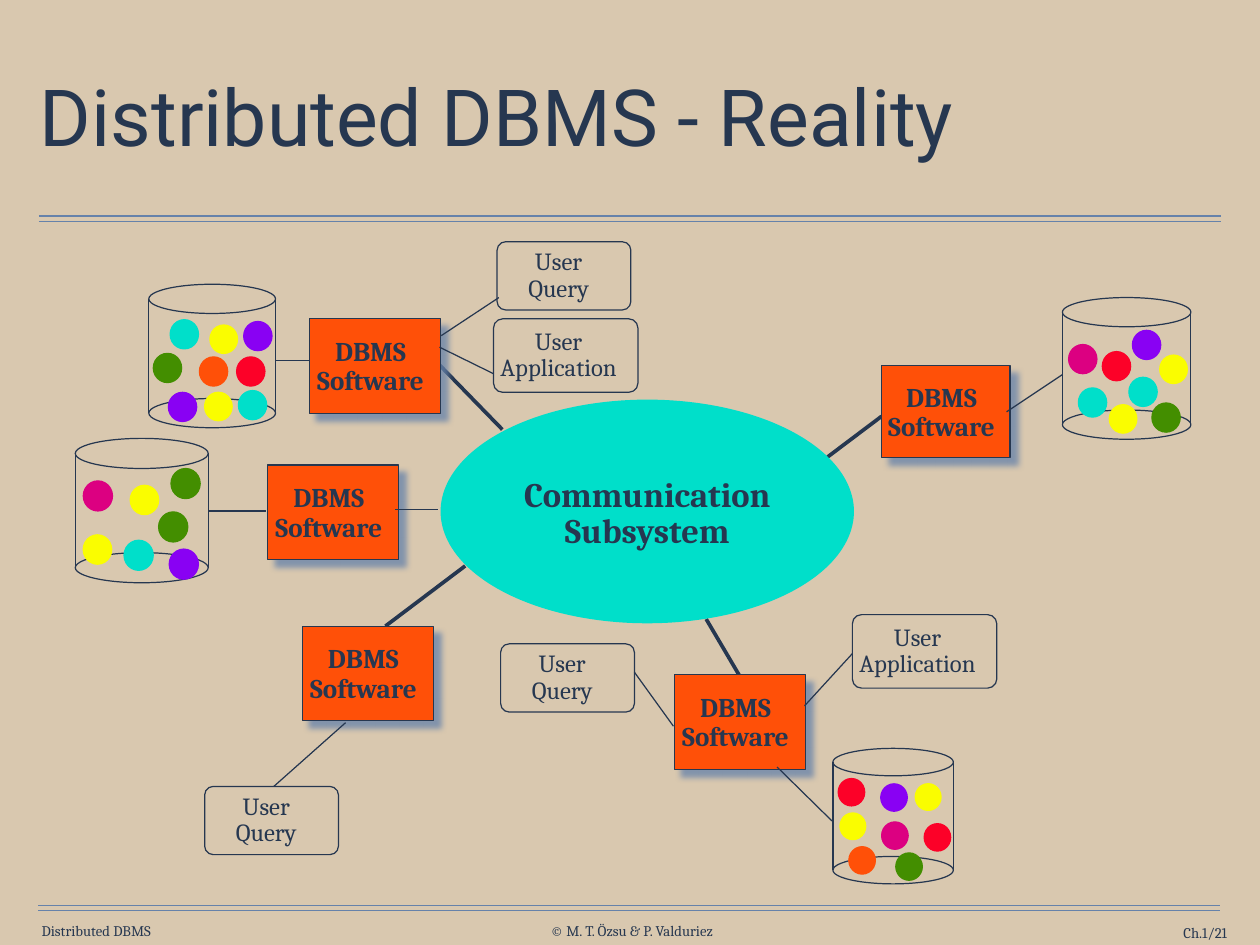
from lxml.etree import SubElement as Sub
from pptx import Presentation as Deck
from pptx.dml.color import RGBColor as Rgb
from pptx.enum.shapes import MSO_CONNECTOR as Wire, MSO_SHAPE as Form
from pptx.enum.text import MSO_ANCHOR as Anchor, PP_ALIGN as Align
from pptx.oxml.ns import qn
from pptx.util import Inches, Pt

HUES = {
    "sand": "D9C8AF", "ink": "263750", "rule": "6682AA",
    "yellow": "FAFD00", "green": "438E00", "teal": "00DFCA", "pink": "DC0081",
    "purple": "8901F3", "red": "FC0128", "orange": "FF5008",
}
FONT = "Cambria"
TITLE = "Distributed DBMS - Reality"
HUB = ["Communication", "Subsystem"]
RULES = [(0.44, 2.44), (0.44, 2.5), (0.43, 10.22), (0.43, 10.28)]
FOOTERS = [
    ("Distributed DBMS", 0.47, 10.41, 1.38, Align.LEFT),
    ("© M. T. Özsu & P. Valduriez", 6.09, 10.41, 2.08, Align.CENTER),
    ("Ch.1/21", 12.31, 10.43, 1.54, Align.RIGHT),
]
TRUNKS = [
    (4.91, 4.07, 5.67, 4.85), (9.34, 5.16, 9.95, 4.7),
    (7.97, 6.99, 8.37, 7.67), (4.35, 7.07, 5.25, 6.39),
]
LINKS = [
    (4.94, 5.75, 4.46, 5.75), (3, 5.77, 2.35, 5.77), (3.12, 4.07, 3.49, 4.07),
    (4.96, 3.92, 5.57, 4.22), (4.98, 3.79, 5.63, 3.36), (8.77, 8.66, 9.39, 9.27),
    (9.62, 7.38, 9.08, 7.97), (7.16, 7.59, 7.6, 8.2), (3.9, 8.16, 3.09, 8.88),
    (11.36, 4.65, 11.99, 4.23),
]
SITES = [
    (3.49, 3.6, 1.48, 1.07), (3.02, 5.25, 1.48, 1.07), (3.41, 7.07, 1.48, 1.07),
    (7.61, 7.62, 1.48, 1.07), (9.95, 4.13, 1.45, 1.04),
]
USERS = {
    "Query": (1.51, 0.77, 0.12, [(5.61, 2.73), (5.65, 7.27), (2.31, 8.88)]),
    "Application": (1.63, 0.83, 0.16, [(5.57, 3.6), (9.62, 6.94)]),
}
STORES = [
    ((0.85, 4.95, 1.5, 0.34), 1.29, 0.33, [
        ("yellow", 1.49, 5.5), ("yellow", 0.96, 6.06), ("green", 1.79, 5.78),
        ("green", 1.93, 5.29), ("teal", 1.4, 6.1), ("pink", 0.94, 5.43),
        ("purple", 1.91, 6.2)]),
    ((1.68, 3.21, 1.43, 0.33), 1.29, 0.32, [
        ("yellow", 2.33, 4.45), ("yellow", 2.39, 3.69), ("green", 1.73, 3.99),
        ("teal", 2.69, 4.41), ("teal", 1.92, 3.61), ("red", 2.67, 4.03),
        ("purple", 2.75, 3.63), ("purple", 1.9, 4.43), ("orange", 2.25, 4.03)]),
    ((9.4, 8.45, 1.36, 0.31), 1.22, 0.3, [
        ("purple", 9.94, 8.85), ("green", 10.11, 9.63), ("red", 9.46, 8.79),
        ("red", 10.43, 9.3), ("pink", 9.95, 9.28), ("orange", 9.58, 9.56),
        ("yellow", 10.35, 8.87), ("yellow", 9.5, 9.2)]),
    ((11.99, 3.36, 1.45, 0.33), 1.27, 0.32, [
        ("yellow", 12.54, 4.59), ("green", 13, 4.55), ("yellow", 13.11, 4.03),
        ("teal", 12.17, 4.38), ("teal", 12.74, 4.26), ("red", 12.44, 3.97),
        ("pink", 12.06, 3.89), ("purple", 12.78, 3.73)]),
]


def paint(hue):
    return Rgb.from_string(HUES[hue])


def draw_line(pool, ends, hue="ink", width=1):
    line = pool.add_connector(Wire.STRAIGHT, *map(Inches, ends))
    line.line.color.rgb = paint(hue)
    line.line.width = Pt(width)
    Sub(line._element.spPr, qn("a:effectLst"))


def draw_shape(pool, form, area, fill=None, edge="ink", width=1):
    shape = pool.add_shape(form, *map(Inches, area))
    if fill:
        shape.fill.solid()
        shape.fill.fore_color.rgb = paint(fill)
    else:
        shape.fill.background()
    shape.line.color.rgb = paint(edge)
    shape.line.width = Pt(width)
    shape.shadow.inherit = False
    return shape


def cast_shade(shape):
    host = shape._element.spPr.find(qn("a:effectLst"))
    shade = Sub(host, qn("a:outerShdw"), blurRad=str(Pt(5)), dist=str(Pt(8.5)),
                dir="2700000", algn="tl", rotWithShape="0")
    tint = Sub(shade, qn("a:srgbClr"), val=HUES["rule"])
    Sub(tint, qn("a:alpha"), val="75000")


def write(shape, lines, size, pads=(0, 0, 0, 0), align=Align.CENTER,
          space=0.9, bold=False, wrap=True, font=FONT):
    frame = shape.text_frame
    frame.word_wrap = wrap
    frame.vertical_anchor = Anchor.MIDDLE
    (frame.margin_left, frame.margin_top,
     frame.margin_right, frame.margin_bottom) = map(Inches, pads)
    for rank, text in enumerate(lines):
        para = frame.add_paragraph() if rank else frame.paragraphs[0]
        para.alignment = align
        para.line_spacing = space
        run = para.add_run()
        run.text = text
        run.font.name = font
        run.font.size = Pt(size)
        run.font.bold = bold
        run.font.color.rgb = paint("ink")


def draw_store(pool, rim, drop, size, dots):
    left, top, width, depth = rim
    for y in (top, top + drop):
        draw_shape(pool, Form.OVAL, (left, y, width, depth))
    start = top + depth / 2
    for x in (left, left + width):
        draw_line(pool, (x, start, x, start + drop))
    for hue, x, y in dots:
        small = hue == "yellow"
        side = size - 0.05 if small else size
        draw_shape(pool, Form.OVAL, (x, y, side, side + 0.01), hue, hue, 4 if small else 1)


def main():
    deck = Deck()
    deck.slide_width, deck.slide_height = Inches(14.22), Inches(10.67)
    slide = deck.slides.add_slide(deck.slide_layouts[5])
    slide.background.fill.solid()
    slide.background.fill.fore_color.rgb = paint("sand")
    pool = slide.shapes

    title = pool.title
    title.left, title.top, title.width, title.height = map(Inches, (0.39, 0.49, 13.44, 1.76))
    write(title, [TITLE], 64, (0.06,) * 4, Align.LEFT, font="Roboto")

    for x, y in RULES:
        draw_line(pool, (x, y, x + 13.34, y), "rule")
    for text, x, y, width, align in FOOTERS:
        box = pool.add_textbox(*map(Inches, (x, y, width, 0.2)))
        write(box, [text], 12, align=align, space=1, wrap=False)

    for ends in TRUNKS:
        draw_line(pool, ends, width=3)
    hub = draw_shape(pool, Form.OVAL, (5, 4.54, 4.61, 2.47), "teal", "teal", 4)
    write(hub, HUB, 28, (0, 0.08, 0, 0), space=0.85, bold=True)

    for area in SITES:
        site = draw_shape(pool, Form.RECTANGLE, area, "orange")
        cast_shade(site)
        write(site, ["DBMS", "Software"], 22, (0, 0.03, 0.1, 0), bold=True)
    for need, (width, height, pad, spots) in USERS.items():
        for x, y in spots:
            user = draw_shape(pool, Form.ROUNDED_RECTANGLE, (x, y, width, height))
            user.adjustments[0] = 0.125
            write(user, ["User", need], 20, (0, 0, pad, 0))
    for store in STORES:
        draw_store(pool.add_group_shape().shapes, *store)
    for ends in LINKS:
        draw_line(pool, ends)
    deck.save("out.pptx")


if __name__ == "__main__":
    main()
